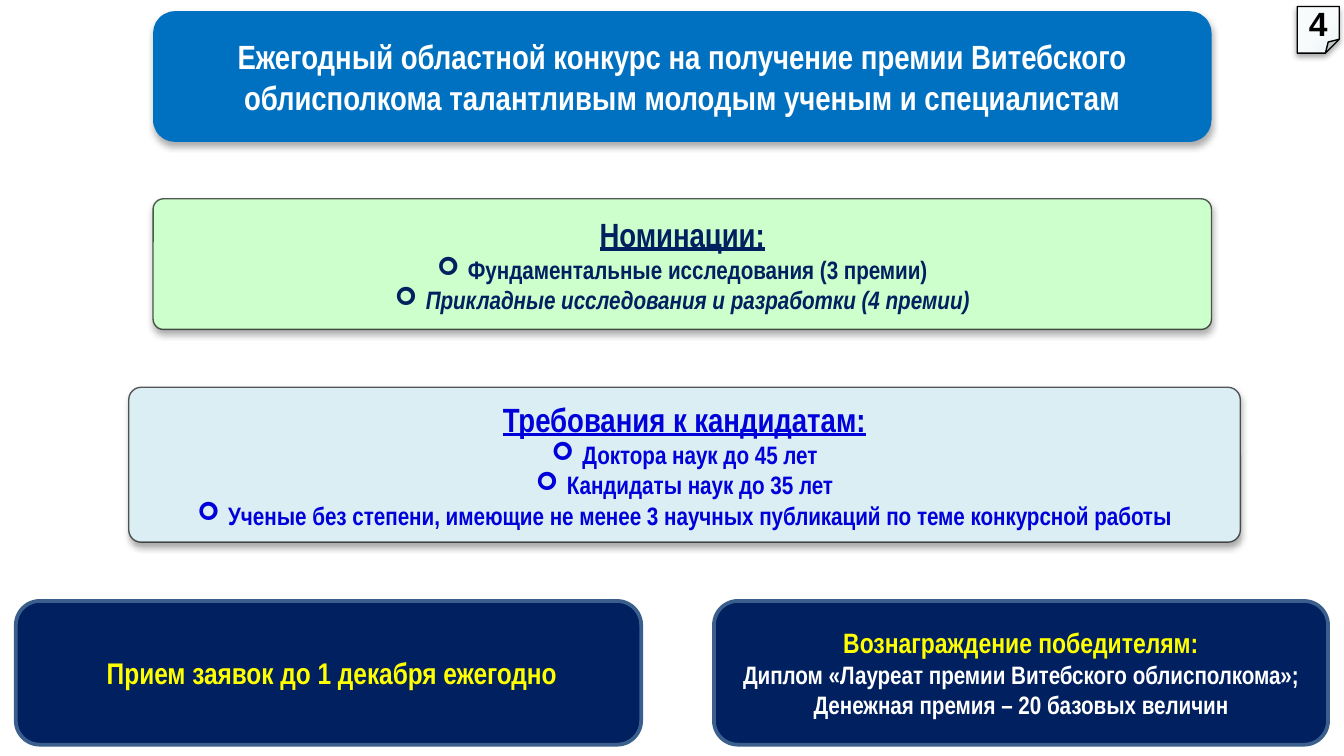
from lxml.etree import SubElement
from pptx import Presentation
from pptx.dml.color import RGBColor
from pptx.enum.shapes import MSO_SHAPE
from pptx.enum.text import MSO_ANCHOR, PP_ALIGN
from pptx.oxml.ns import qn
from pptx.util import Pt

HEX = {
    "blue": "0070C0", "green": "CCFFCC", "pale": "DBEEF4", "navy": "002060",
    "edge": "3A5F8C", "link": "0000DA", "yellow": "FFFF00", "white": "FFFFFF",
    "black": "000000", "mist": "E9F4F5", "paper": "F8FBFC",
}


def rgb(name):
    return RGBColor.from_string(HEX[name])


def add_alpha(node, percent):
    SubElement(node, qn("a:alpha"), val=str(percent * 1000))


def add_shadow(shape, alpha=32, blur=3.5, dist=2.2):
    effects = shape._element.spPr.find(qn("a:effectLst"))
    outer = SubElement(effects, qn("a:outerShdw"), blurRad=str(Pt(blur)),
                       dist=str(Pt(dist)), dir="5400000", rotWithShape="0")
    color = SubElement(outer, qn("a:srgbClr"), val=HEX["black"])
    add_alpha(color, alpha)


def add_panel(slide, box, fill=None, edge=None, width=0.75,
              kind=MSO_SHAPE.ROUNDED_RECTANGLE, inset=(7.2, 3.6)):
    shape = slide.shapes.add_shape(kind, *map(Pt, box))
    shape.shadow.inherit = False
    if fill:
        shape.fill.solid()
        shape.fill.fore_color.rgb = rgb(fill)
    if edge:
        shape.line.color.rgb = rgb(edge)
        shape.line.width = Pt(width)
    else:
        shape.line.fill.background()
    frame = shape.text_frame
    frame.word_wrap = True
    frame.vertical_anchor = MSO_ANCHOR.MIDDLE
    frame.margin_left = frame.margin_right = Pt(inset[0])
    frame.margin_top = frame.margin_bottom = Pt(inset[1])
    return shape


def add_text(shape, text, size=13.5, color="white", font="Arial Narrow",
             under=False, italic=False, bullet=False):
    frame = shape.text_frame
    para = frame.paragraphs[0]
    if para.runs:
        para = frame.add_paragraph()
    para.alignment = PP_ALIGN.CENTER
    if bullet:
        props = para._p.get_or_add_pPr()
        props.set("marL", str(Pt(16.5)))
        props.set("indent", str(-Pt(16.5)))
        SubElement(props, qn("a:buFont"), typeface="Wingdings")
        SubElement(props, qn("a:buChar"), char="➢")
    run = para.add_run()
    run.text = text
    run.font.name = font
    run.font.size = Pt(size)
    run.font.bold = True
    run.font.italic = italic
    run.font.underline = under
    run.font.color.rgb = rgb(color)


def add_title(slide, box):
    panel = add_panel(slide, box, "blue", inset=(0, 3.6))
    add_shadow(panel)
    add_text(panel, "Ежегодный областной конкурс на получение премии Витебского "
             "облисполкома талантливым молодым ученым и специалистам", size=18)


def add_list(slide, box, fill, color, head, items):
    """Place a headed bullet list; each item is (text, italic)."""
    panel = add_panel(slide, box, fill, "black", inset=(2, 1.5))
    panel.adjustments[0] = 0.08
    outline = panel._element.spPr.find(qn("a:ln"))
    add_alpha(outline.find(".//" + qn("a:srgbClr")), 64)
    add_shadow(panel)
    add_text(panel, head, size=18, color=color, under=True)
    for text, italic in items:
        add_text(panel, text, color=color, italic=italic, bullet=True)


def add_note(slide, box, lines):
    """Place a navy box; each line is (text, size, color)."""
    panel = add_panel(slide, box, "navy", "edge", width=2)
    for text, size, color in lines:
        add_text(panel, text, size=size, color=color)


def add_number(slide, box, text):
    page = add_panel(slide, box, edge="black", kind=MSO_SHAPE.FOLDED_CORNER, inset=(0, 0))
    guides = page._element.spPr.find(qn("a:prstGeom")).find(qn("a:avLst"))
    for guide in list(guides):
        guides.remove(guide)
    SubElement(guides, qn("a:gd"), name="adj", fmla="val 33000")
    page.fill.gradient()
    page.fill.gradient_angle = 135
    stops = page.fill.gradient_stops
    for stop, place, color in zip(stops, (0, 0.5), ("mist", "paper")):
        stop.position = place
        stop.color.rgb = rgb(color)
    add_shadow(page, alpha=35, blur=3.1, dist=1.8)
    add_text(page, text, size=18, color="black", font="Arial")


def main():
    deck = Presentation()
    deck.slide_width, deck.slide_height = Pt(720), Pt(405)
    slide = deck.slides.add_slide(deck.slide_layouts[6])
    add_title(slide, (82, 6, 567, 70))
    add_list(slide, (82, 106.5, 567, 70), "green", "navy", "Номинации:", [
        ("Фундаментальные исследования (3 премии)", False),
        ("Прикладные исследования и разработки (4 премии)", True),
    ])
    add_note(slide, (8.5, 322, 335, 77), [
        (" Прием заявок до 1 декабря ежегодно", 16, "yellow"),
    ])
    add_note(slide, (382.5, 322, 329, 77), [
        ("Вознаграждение победителям:", 15, "yellow"),
        ("Диплом «Лауреат премии Витебского облисполкома»;", 13.5, "white"),
        ("Денежная премия – 20 базовых величин", 13.5, "white"),
    ])
    add_list(slide, (69, 207.5, 595.5, 83), "pale", "link", "Требования к кандидатам:", [
        ("Доктора наук до 45 лет", False),
        ("Кандидаты наук до 35 лет", False),
        ("Ученые без степени, имеющие не менее 3 научных публикаций "
         "по теме конкурсной работы", False),
    ])
    add_number(slide, (695, 3.5, 22.5, 25), "4")
    deck.save("out.pptx")


if __name__ == "__main__":
    main()
